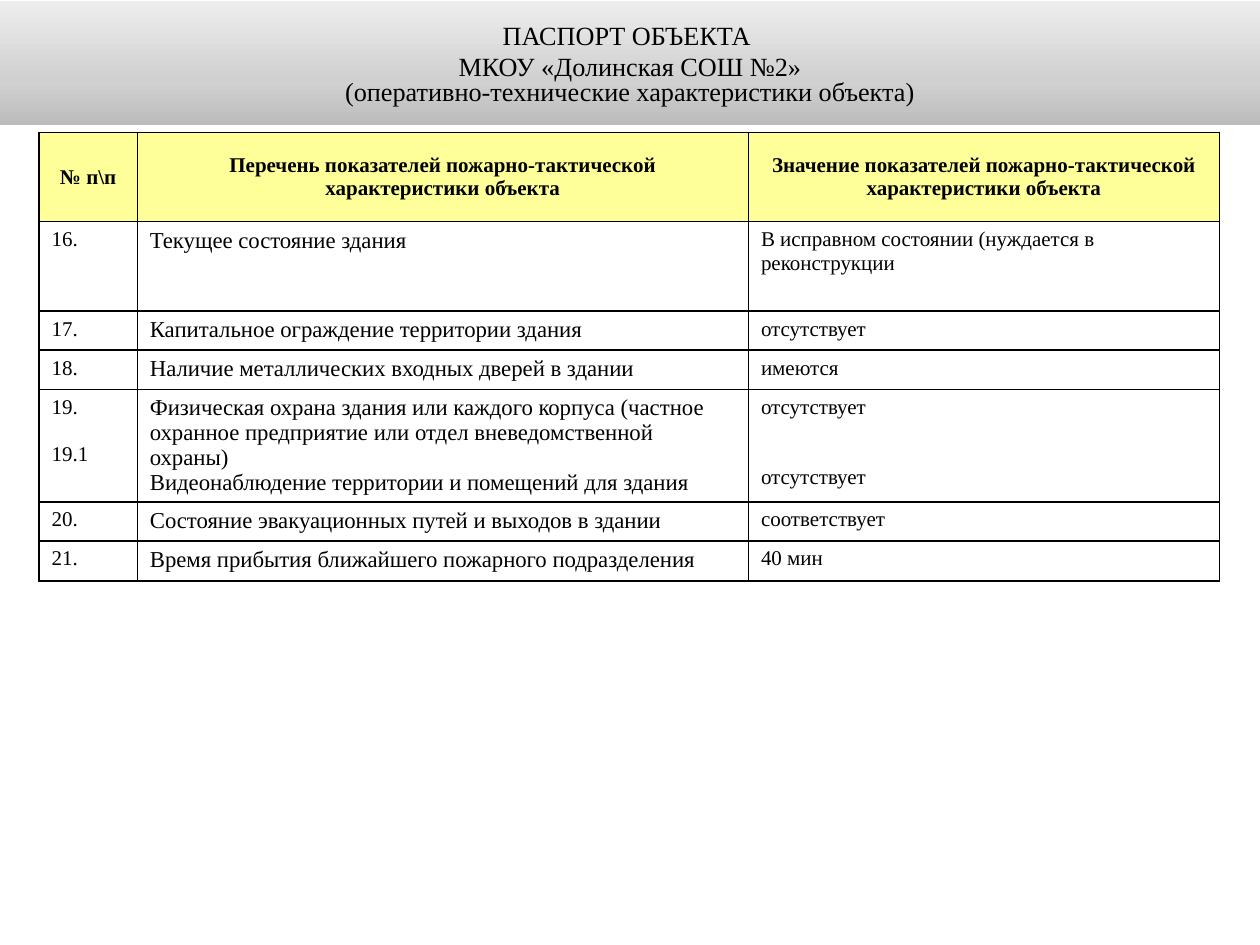
from copy import deepcopy
from dataclasses import dataclass

from lxml.etree import SubElement
from pptx import Presentation
from pptx.dml.color import RGBColor as Color
from pptx.enum.text import MSO_ANCHOR as Anchor, MSO_AUTO_SIZE as AutoSize, PP_ALIGN as Align
from pptx.oxml.ns import qn
from pptx.util import Inches, Pt


@dataclass(frozen=True)
class Theme:
    font: str = "Times New Roman"
    ink: str = "000000"
    accent: str = "0000FF"
    header_fill: str = "FFFF99"
    body_fill: str = "FFFFFF"
    banner_stops: tuple = ((0, "BCBCBC"), (0.35, "D0D0D0"), (1, "EDEDED"))
    title_size: float = 15
    indicator_size: float = 13
    text_size: float = 12
    line_height: float = 13.4
    border: float = 1


THEME = Theme()
SLIDE_WIDTH, SLIDE_HEIGHT = Inches(10), Inches(7.5)

TITLE = [
    "ПАСПОРТ ОБЪЕКТА ",
    "МКОУ «Долинская СОШ №2»",
    "(оперативно-технические характеристики объекта)",
]

# Table grid, in inches
TABLE_LEFT, TABLE_TOP = 0.31, 1.05
COLUMNS = [0.78, 4.85, 3.74]
ROWS = [0.71, 0.71, 0.31, 0.31, 0.74, 0.31, 0.32]

HEADER = [
    "№ п\\п",
    "Перечень показателей пожарно-тактической характеристики объекта",
    "Значение показателей пожарно-тактической характеристики объекта",
]
INDICATORS = [
    ("16.", "Текущее состояние здания", "В исправном состоянии (нуждается в реконструкции"),
    ("17.", "Капитальное ограждение территории здания", "отсутствует"),
    ("18.", "Наличие металлических входных дверей в здании", "имеются"),
    ("19.\n19.1",
     "Физическая охрана здания или каждого корпуса (частное охранное предприятие "
     "или отдел вневедомственной охраны)\n"
     "Видеонаблюдение территории и помещений для здания",
     "отсутствует\nотсутствует"),
    ("20.", "Состояние эвакуационных путей и выходов в здании", "соответствует"),
    ("21.", "Время прибытия ближайшего пожарного подразделения", "40 мин"),
]
# Lines left free before the second paragraph of a cell, by column
GAP_LINES = [1, 0, 2]


def format_para(para, size, color=THEME.ink, bold=False, underline=False, align=Align.LEFT):
    para.alignment = align
    for span in para.runs:
        font = span.font
        font.name, font.size = THEME.font, Pt(size)
        font.bold, font.underline = bold, underline
        font.color.rgb = Color.from_string(color)


def fill_gradient(shape, stops):
    """Vertical gradient running from the bottom edge to the top."""
    shape.fill.gradient()
    shape.fill.gradient_angle = 90
    stop_list = shape.fill.gradient_stops[0]._gs.getparent()
    stop_list.insert(1, deepcopy(stop_list[0]))
    for stop, (position, color) in zip(shape.fill.gradient_stops, stops):
        stop.position = position
        stop.color.rgb = Color.from_string(color)


def add_banner(page):
    banner = page.shapes.title
    banner.left, banner.top = 0, Inches(0.01)
    banner.width, banner.height = SLIDE_WIDTH, Inches(0.98)
    fill_gradient(banner, THEME.banner_stops)

    frame = banner.text_frame
    frame.text = "\n".join(TITLE)
    frame.word_wrap = True
    frame.auto_size = AutoSize.NONE
    frame.vertical_anchor = Anchor.MIDDLE
    frame.margin_left = frame.margin_right = Inches(0.09)
    frame.margin_top = frame.margin_bottom = Inches(0.05)
    heading, school, subtitle = frame.paragraphs
    for para in frame.paragraphs:
        para.space_before = Pt(0)
        format_para(para, THEME.title_size, align=Align.CENTER,
                    color=THEME.accent if para is subtitle else THEME.ink,
                    underline=para is school)
    subtitle.line_spacing = 0.8


def set_borders(cell):
    properties = cell._tc.get_or_add_tcPr()
    for index, side in enumerate(("lnL", "lnR", "lnT", "lnB")):
        line = properties.makeelement(qn(f"a:{side}"), {"w": str(Pt(THEME.border))})
        SubElement(SubElement(line, qn("a:solidFill")), qn("a:srgbClr"), val=THEME.ink)
        properties.insert(index, line)


def fill_cell(cell, text, column, is_header):
    cell.fill.solid()
    cell.fill.fore_color.rgb = Color.from_string(
        THEME.header_fill if is_header else THEME.body_fill)
    set_borders(cell)
    cell.vertical_anchor = Anchor.MIDDLE if is_header else Anchor.TOP
    cell.margin_left = cell.margin_right = Inches(0.1)
    cell.margin_top = cell.margin_bottom = Inches(0.05)

    cell.text_frame.text = text
    is_indicator = column == 1 and not is_header
    size = THEME.indicator_size if is_indicator else THEME.text_size
    for index, para in enumerate(cell.text_frame.paragraphs):
        format_para(para, size, bold=is_header,
                    align=Align.CENTER if is_header else Align.LEFT)
        if index:
            para.space_before = Pt(GAP_LINES[column] * THEME.line_height)


def add_indicator_table(page):
    table = page.shapes.add_table(
        len(ROWS), len(COLUMNS), Inches(TABLE_LEFT), Inches(TABLE_TOP),
        Inches(sum(COLUMNS)), Inches(sum(ROWS))).table
    table.horz_banding = False
    for column, width in zip(table.columns, COLUMNS):
        column.width = Inches(width)
    for row, height in zip(table.rows, ROWS):
        row.height = Inches(height)
    for row_index, texts in enumerate([HEADER, *INDICATORS]):
        for column_index, text in enumerate(texts):
            fill_cell(table.cell(row_index, column_index), text,
                      column_index, is_header=row_index == 0)


def main():
    deck = Presentation()
    deck.slide_width, deck.slide_height = SLIDE_WIDTH, SLIDE_HEIGHT
    page = deck.slides.add_slide(deck.slide_layouts[5])  # title only
    add_banner(page)
    add_indicator_table(page)
    deck.save("out.pptx")


if __name__ == "__main__":
    main()
